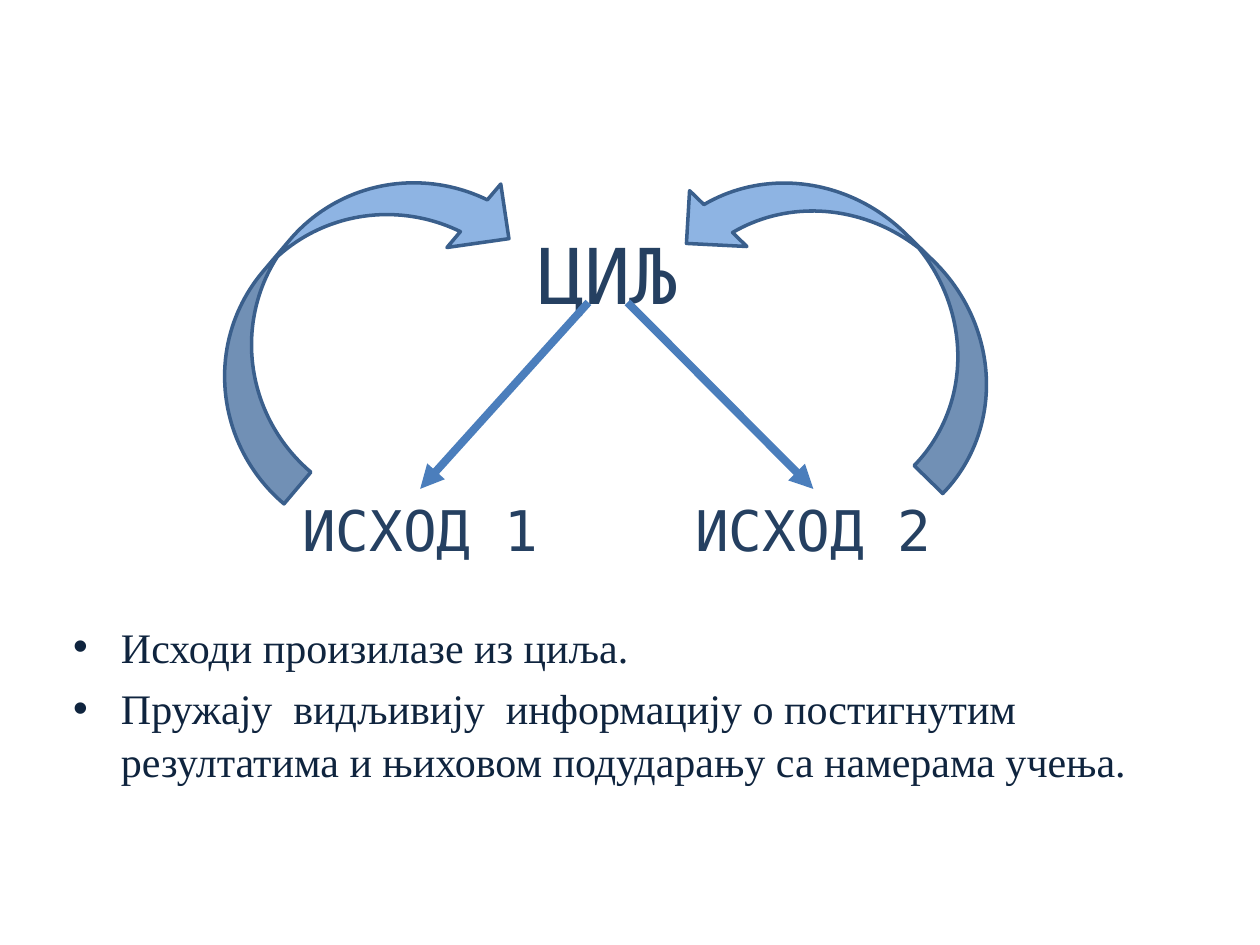
from lxml import etree
from pptx import Presentation
from pptx.dml.color import RGBColor
from pptx.enum.shapes import MSO_CONNECTOR, MSO_SHAPE
from pptx.enum.text import MSO_AUTO_SIZE, PP_ALIGN
from pptx.oxml.ns import qn
from pptx.util import Inches, Pt

STRAIGHT = MSO_CONNECTOR.STRAIGHT
CURVED_ARROW = MSO_SHAPE.CURVED_LEFT_ARROW
GROW = MSO_AUTO_SIZE.SHAPE_TO_FIT_TEXT
CENTER = PP_ALIGN.CENTER
TOP = 0

COLORS = {
    "body": "0F243E",
    "label": "254061",
    "line": "4B7EBC",
    "arrow": "8EB4E3",
    "outline": "3A5F8C",
}


class GoalSlide:
    body_font = "Times New Roman"
    label_font = "DejaVu Sans Mono"

    def __init__(self, prs):
        self.slide = prs.slides.add_slide(prs.slide_layouts[1])
        title = self.slide.shapes.title._element
        title.getparent().remove(title)

    def color(self, name):
        return RGBColor.from_string(COLORS[name])

    def style(self, p, font, size, color):
        for r in p.runs:
            r.font.name = font
            r.font.size = Pt(size)
            r.font.color.rgb = self.color(color)

    def place(self, s, left, top, width, height):
        s.left, s.top = Inches(left), Inches(top)
        s.width, s.height = Inches(width), Inches(height)

    def bullets(self, items, *box):
        s = self.slide.placeholders[1]
        self.place(s, *box)
        tf = s.text_frame
        tf.text = "\n".join(items)
        tf.auto_size = GROW
        for i, p in enumerate(tf.paragraphs):
            pPr = p._p.get_or_add_pPr()
            pPr.set("marL", str(Inches(0.38)))
            pPr.set("indent", str(-Inches(0.38)))
            etree.SubElement(pPr, qn("a:buChar")).set("char", "•")
            p.line_spacing = 1.05
            p.space_before = Pt(4.8 if i else 0)
            self.style(p, self.body_font, 24, "body")

    def label(self, text, size, left, top, width, height):
        s = self.slide.shapes.add_textbox(
            Inches(left), Inches(top), Inches(width), Inches(height))
        tf = s.text_frame
        tf.word_wrap = True
        tf.auto_size = GROW
        tf.text = text
        p = tf.paragraphs[0]
        p.alignment = CENTER
        self.style(p, self.label_font, size, "label")
        return s

    def pointer(self, x, y, target):
        s = self.slide.shapes.add_connector(
            STRAIGHT, Inches(x), Inches(y), target.left, target.top)
        s.end_connect(target, TOP)
        s.line.color.rgb = self.color("line")
        s.line.width = Pt(4.5)
        etree.SubElement(s.line._get_or_add_ln(), qn("a:tailEnd")).set("type", "triangle")
        etree.SubElement(s._element.spPr, qn("a:effectLst"))

    def curved_arrow(self, rotation, flips, left, top, width, height):
        s = self.slide.shapes.add_shape(
            CURVED_ARROW, Inches(left), Inches(top), Inches(width), Inches(height))
        s.shadow.inherit = False
        s.rotation = rotation
        for flip in flips:
            s._element.spPr.get_or_add_xfrm().set(flip, "1")
        s.fill.solid()
        s.fill.fore_color.rgb = self.color("arrow")
        s.line.color.rgb = self.color("outline")
        s.line.width = Pt(2)


def main():
    prs = Presentation()
    prs.slide_width, prs.slide_height = Inches(10), Inches(7.5)
    page = GoalSlide(prs)
    page.bullets([
        "Исходи произилазе из циља.",
        "Пружају  видљивију  информацију о постигнутим резултатима "
        "и њиховом подударању са намерама учења.",
    ], 0.48, 4.86, 9, 1.39)
    page.label("ЦИЉ", 44, 3.91, 1.76, 1.83, 0.84)
    outcome_1 = page.label("ИСХОД 1", 32, 2.17, 3.88, 2.33, 0.64)
    outcome_2 = page.label("ИСХОД 2", 32, 5.33, 3.88, 2.25, 0.64)
    page.pointer(4.67, 2.4, outcome_1)
    page.pointer(4.98, 2.4, outcome_2)
    page.curved_arrow(40.3, ["flipH", "flipV"], 2.09, 0.85, 1.32, 3.09)
    page.curved_arrow(314.3, ["flipV"], 6.16, 0.78, 1.27, 3.16)
    prs.save("out.pptx")


if __name__ == "__main__":
    main()
